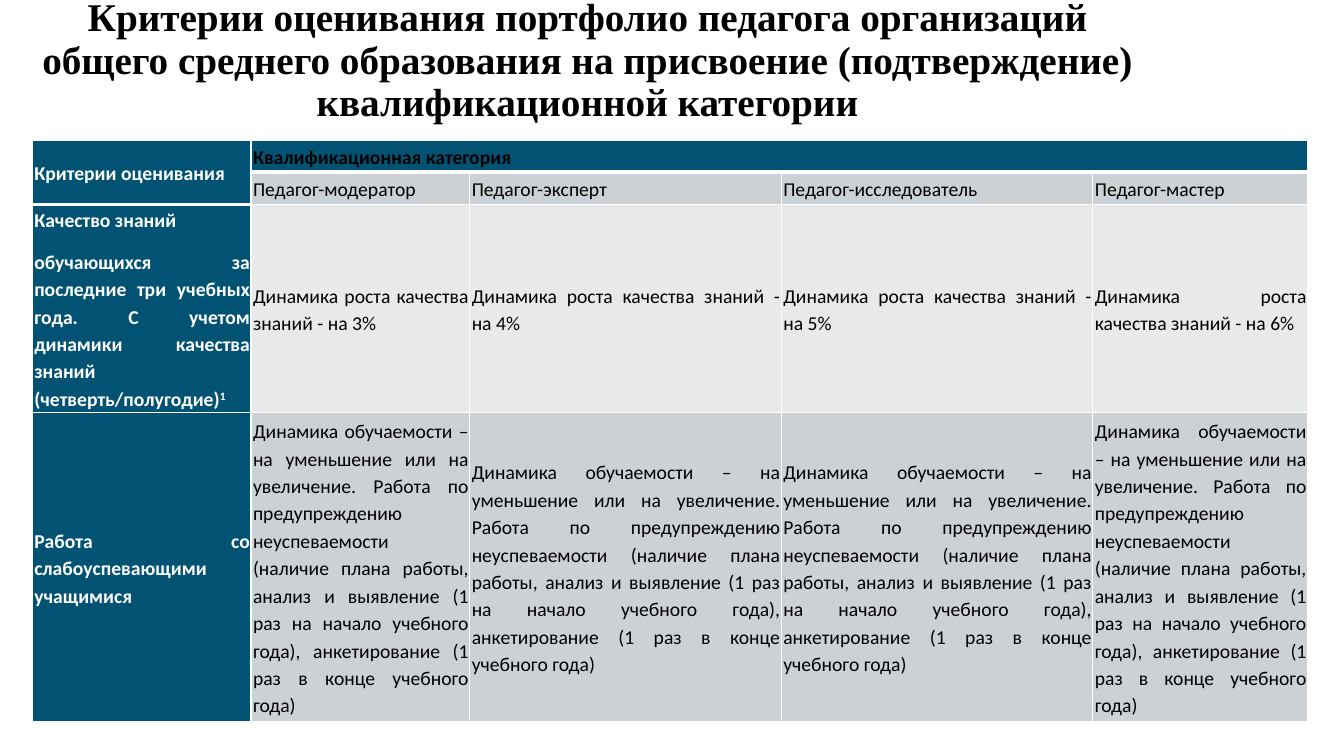
from lxml import etree
from pptx import Presentation, util as u
from pptx.dml.color import RGBColor
from pptx.enum import text
from pptx.oxml.ns import qn

WIDTH, HEIGHT = 13.33, 7.5
TEAL, GREY, LIGHT = "025373", "CCD1D5", "E7E9EB"
WHITE, BLACK = "FFFFFF", "000000"


def format_font(font, name, size, color):
    font.name, font.size = name, u.Pt(size)
    font.color.rgb = RGBColor.from_string(color)


def add_border(cell, side, points):
    line = etree.SubElement(cell._tc.get_or_add_tcPr(), qn(f"a:{side}"), w=str(u.Pt(points)))
    fill = etree.SubElement(line, qn("a:solidFill"))
    etree.SubElement(fill, qn("a:srgbClr"), val=WHITE)


presentation = Presentation()
presentation.slide_width, presentation.slide_height = u.Inches(WIDTH), u.Inches(HEIGHT)
slide = presentation.slides.add_slide(presentation.slide_layouts[5])

# Title, raised inside its box by a deep bottom margin
title = slide.shapes.title
title.left, title.top = u.Inches(0.17), u.Inches(0.35)
title.width, title.height = u.Inches(11.31), u.Inches(1.45)
frame = title.text_frame
frame.text = ("Критерии оценивания портфолио педагога организаций общего среднего "
              "образования на присвоение (подтверждение) квалификационной категории")
frame.word_wrap = True
frame.auto_size = text.MSO_AUTO_SIZE.NONE
frame.vertical_anchor = text.MSO_ANCHOR.MIDDLE
frame.margin_top, frame.margin_bottom = u.Inches(0.05), u.Inches(0.98)
paragraph = frame.paragraphs[0]
paragraph.alignment = text.PP_ALIGN.CENTER
paragraph.line_spacing = 0.9
format_font(paragraph.runs[0].font, "Times New Roman", 28, BLACK)
paragraph.runs[0].font.bold = True

# Table content
support = ("Динамика обучаемости – на уменьшение или на увеличение. Работа по предупреждению "
           "неуспеваемости (наличие плана работы, анализ и выявление (1 раз на начало учебного "
           "года), анкетирование (1 раз в конце учебного года)")
quality = ("Качество знаний\nобучающихся за последние три учебных года. С учетом динамики "
           "качества знаний (четверть/полугодие)")
rows = [
    ["Критерии оценивания", "Квалификационная категория", "", "", ""],
    ["", "Педагог-модератор", "Педагог-эксперт", "Педагог-исследователь", "Педагог-мастер"],
    [quality] + [f"Динамика роста качества знаний - на {percent}%" for percent in range(3, 7)],
    ["Работа со слабоуспевающими учащимися"] + [support] * 4,
]
column_widths = [2.17, 2.17, 3.09, 3.09, 2.13]
row_heights = [0.32, 0.32, 2.05, 3.07]
row_fills = [TEAL, GREY, LIGHT, GREY]

# Table grid
table = slide.shapes.add_table(
    len(rows), len(column_widths), u.Inches(0.32), u.Inches(1.39),
    u.Inches(sum(column_widths)), u.Inches(sum(row_heights))).table
for column, width in zip(table.columns, column_widths):
    column.width = u.Inches(width)
for row, height in zip(table.rows, row_heights):
    row.height = u.Inches(height)
table.cell(0, 0).merge(table.cell(1, 0))
table.cell(0, 1).merge(table.cell(0, 4))

# Cells
for r, row in enumerate(rows):
    for c, content in enumerate(row):
        cell = table.cell(r, c)
        heading = r == 0 or c == 0
        thick_bottom = r == 0 or (r, c) == (1, 0)
        for side in ("lnL", "lnR", "lnT", "lnB"):
            add_border(cell, side, 3 if side == "lnB" and thick_bottom else 1)
        cell.fill.solid()
        cell.fill.fore_color.rgb = RGBColor.from_string(TEAL if heading else row_fills[r])
        cell.vertical_anchor = text.MSO_ANCHOR.MIDDLE
        cell.margin_left = cell.margin_right = u.Inches(0.01)
        cell.margin_top = cell.margin_bottom = u.Inches(0.01)
        if cell.is_spanned:
            continue
        cell.text_frame.text = content
        if content == quality:
            footnote = cell.text_frame.paragraphs[-1].add_run()
            footnote.text = "1"
            footnote.font._element.set("baseline", "30000")
        for paragraph in cell.text_frame.paragraphs:
            paragraph.alignment = text.PP_ALIGN.JUSTIFY
            paragraph.line_spacing = 1.15
            paragraph.space_after = u.Pt(10)
            paragraph._p.get_or_add_pPr().set("marL", str(u.Inches(0.01)))
            for run in paragraph.runs:
                format_font(run.font, "Calibri", 14, WHITE if c == 0 else BLACK)
                run.font.bold = heading

presentation.save("out.pptx")
